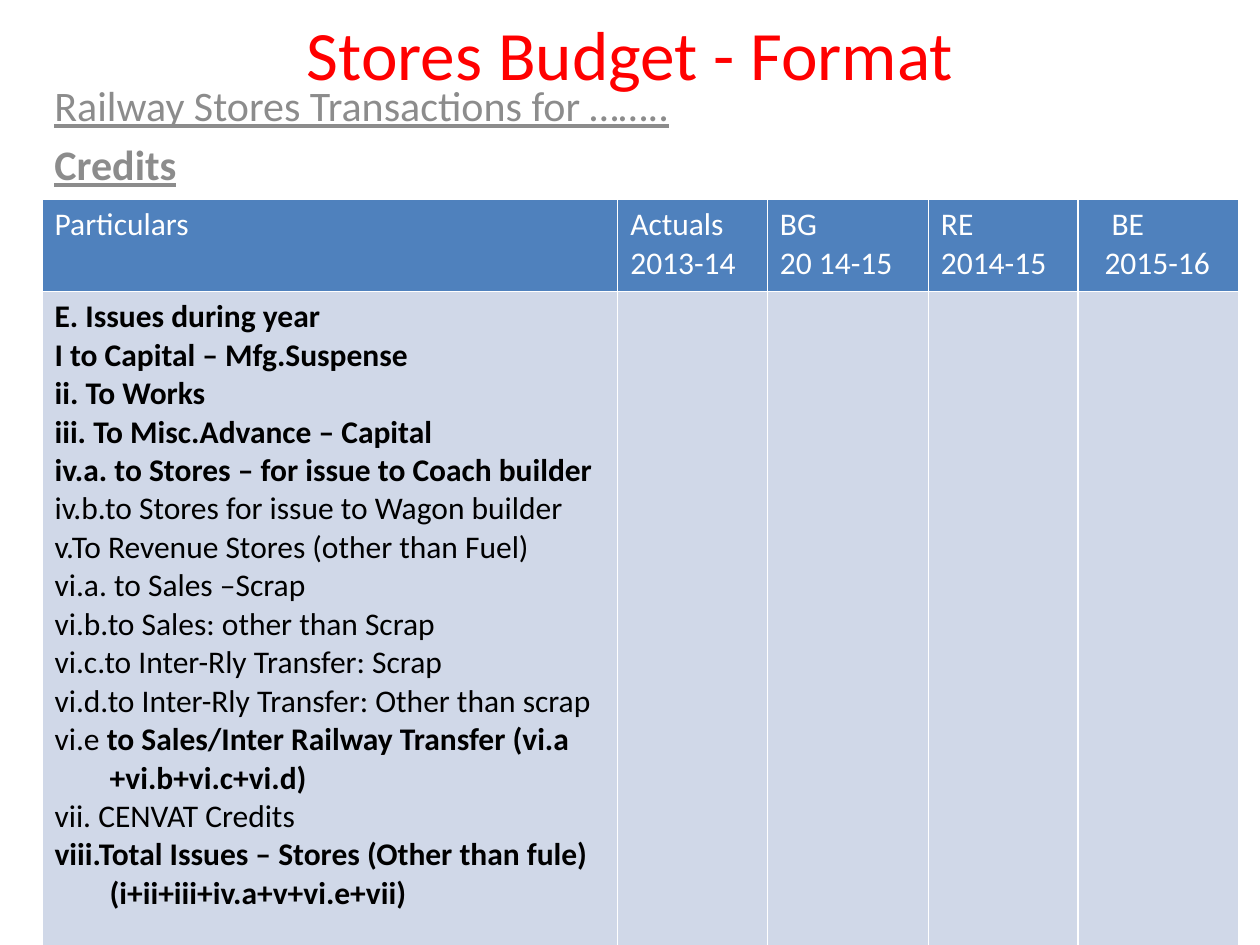
from pptx import Presentation
from pptx.dml.color import RGBColor
from pptx.enum.text import MSO_ANCHOR as Anchor, PP_ALIGN as Align
from pptx.util import Pt

FONT = "Calibri"
RED, GREY, WHITE, BLACK = "FF0000", "8C8C8C", "FFFFFF", "000000"
HEADER_FILL, BODY_FILL = "4F81BD", "D0D8E8"

TITLE = "Stores Budget - Format"
SUBTITLE = [("Railway Stores Transactions for ……..", False), ("Credits", True)]

HEADERS = [
    [("Particulars", 0)],
    [("Actuals", 0), ("2013-14", 0)],
    [("BG", 0), ("20 14-15", 0)],
    [("RE", 0), ("2014-15", 0)],
    [("BE", 12), ("2015-16", 8)],
]
COLUMN_WIDTHS = [329, 85.5, 92, 85.5, 92]
ROW_HEIGHTS = [52.5, 374]

HANGING = 31.5
MAIN_ISSUES = [
    "E. Issues during year",
    "I to Capital – Mfg.Suspense",
    "ii. To Works",
    "iii. To Misc.Advance – Capital",
    "iv.a. to Stores – for issue to Coach builder",
]
OTHER_ISSUES = [
    [("iv.b.to Stores for issue to Wagon builder", False)],
    [("v.To Revenue Stores (other than Fuel)", False)],
    [("vi.a. to Sales –Scrap", False)],
    [("vi.b.to Sales: other than Scrap", False)],
    [("vi.c.to Inter-Rly Transfer: Scrap", False)],
    [("vi.d.to Inter-Rly Transfer: Other than scrap", False)],
    [("vi.e ", False),
     ("to Sales/Inter Railway Transfer (vi.a +vi.b+vi.c+vi.d)", True)],
    [("vii. CENVAT Credits", False)],
    [("viii.Total Issues – Stores (Other than fule)(i+ii+iii+iv.a+v+vi.e+vii)", True)],
]


def rgb(value):
    return RGBColor.from_string(value)


def add_run(paragraph, words, size, color, bold=False, underline=False):
    run = paragraph.add_run()
    run.text = words
    font = run.font
    font.name, font.size, font.bold = FONT, Pt(size), bold
    font.color.rgb = rgb(color)
    if underline:
        font.underline = True


def paragraphs(frame, count):
    return [frame.paragraphs[0]] + [frame.add_paragraph() for _ in range(count - 1)]


def indent(paragraph, left, first=0):
    properties = paragraph._p.get_or_add_pPr()
    properties.set("marL", str(Pt(left)))
    properties.set("indent", str(Pt(first)))


def add_text_frame(slide, left, top, width, height):
    frame = slide.shapes.add_textbox(Pt(left), Pt(top), Pt(width), Pt(height)).text_frame
    frame.word_wrap = True
    return frame


def add_headings(slide):
    title = add_text_frame(slide, 54, 6, 612, 48)
    title.vertical_anchor = Anchor.MIDDLE
    title.paragraphs[0].alignment = Align.CENTER
    add_run(title.paragraphs[0], TITLE, 39.6, RED)

    subtitle = add_text_frame(slide, 24, 42, 672, 432)
    for paragraph, (words, bold) in zip(paragraphs(subtitle, len(SUBTITLE)), SUBTITLE):
        paragraph.alignment = Align.JUSTIFY
        paragraph.space_before = Pt(4.8)
        add_run(paragraph, words, 24, GREY, bold, underline=True)


def add_budget(slide):
    budget = slide.shapes.add_table(
        len(ROW_HEIGHTS), len(COLUMN_WIDTHS), Pt(24), Pt(114),
        Pt(sum(COLUMN_WIDTHS)), Pt(sum(ROW_HEIGHTS))).table
    for column, width in zip(budget.columns, COLUMN_WIDTHS):
        column.width = Pt(width)
    for row, height, fill in zip(budget.rows, ROW_HEIGHTS, (HEADER_FILL, BODY_FILL)):
        row.height = Pt(height)
        for cell in row.cells:
            cell.fill.solid()
            cell.fill.fore_color.rgb = rgb(fill)

    for cell, lines in zip(budget.rows[0].cells, HEADERS):
        for paragraph, (words, left) in zip(paragraphs(cell.text_frame, len(lines)), lines):
            if left:
                indent(paragraph, left)
            add_run(paragraph, words, 18, WHITE)

    issues = [([(words, True)], 0) for words in MAIN_ISSUES]
    issues += [(runs, HANGING) for runs in OTHER_ISSUES]
    particulars = budget.cell(1, 0).text_frame
    for paragraph, (runs, hanging) in zip(paragraphs(particulars, len(issues)), issues):
        if hanging:
            indent(paragraph, hanging, -hanging)
        for words, bold in runs:
            add_run(paragraph, words, 18, BLACK, bold)


def main():
    deck = Presentation()
    deck.slide_width, deck.slide_height = Pt(720), Pt(540)
    slide = deck.slides.add_slide(deck.slide_layouts[6])
    add_headings(slide)
    add_budget(slide)
    deck.save("out.pptx")


if __name__ == "__main__":
    main()
